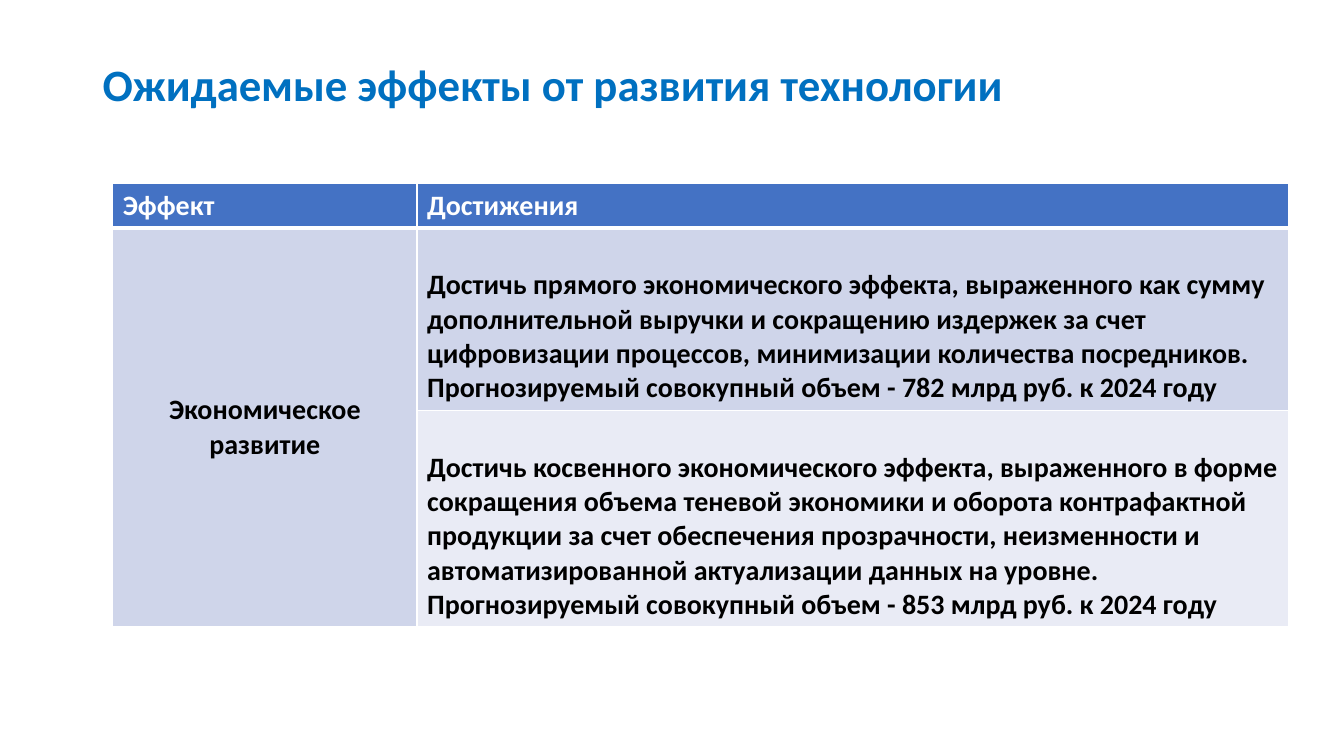
"""Build the slide on the expected effects of the technology."""
from lxml.etree import SubElement
from pptx import Presentation
from pptx.dml.color import RGBColor as Color
from pptx.enum.text import MSO_ANCHOR as Anchor, MSO_AUTO_SIZE as AutoSize, PP_ALIGN as Align
from pptx.oxml.ns import qn
from pptx.util import Cm, Pt

TITLE = "Ожидаемые эффекты от развития технологии"
HEADERS = ["Эффект", "Достижения"]
EFFECT = "Экономическое развитие"
ACHIEVEMENTS = [
    "Достичь прямого экономического эффекта, выраженного как сумму дополнительной "
    "выручки и сокращению издержек за счет цифровизации процессов, минимизации "
    "количества посредников. Прогнозируемый совокупный объем - 782 млрд руб. к 2024 году",
    "Достичь косвенного экономического эффекта, выраженного в форме сокращения объема "
    "теневой экономики и оборота контрафактной продукции за счет обеспечения "
    "прозрачности, неизменности и автоматизированной актуализации данных на уровне. "
    "Прогнозируемый совокупный объем - 853 млрд руб. к 2024 году",
]
COLORS = {
    "title": "0070C0", "header": "4472C4", "band": "CFD5EA",
    "light": "E9EBF5", "text": "000000", "white": "FFFFFF",
}
COLUMN_WIDTHS = [7.67, 21.97]
ROW_HEIGHTS = [1.11, 4.59, 5.46]
CELL_FORMATS = {
    "header": {"fill": "header", "color": "white", "anchor": Anchor.TOP, "align": Align.LEFT},
    "effect": {"fill": "band", "color": "text", "anchor": Anchor.MIDDLE, "align": Align.CENTER},
    "direct": {"fill": "band", "color": "text", "anchor": Anchor.BOTTOM, "align": Align.LEFT},
    "indirect": {"fill": "light", "color": "text", "anchor": Anchor.BOTTOM, "align": Align.LEFT},
}
CELLS = [
    [(HEADERS[0], "header"), (HEADERS[1], "header")],
    [(EFFECT, "effect"), (ACHIEVEMENTS[0], "direct")],
    [("", "effect"), (ACHIEVEMENTS[1], "indirect")],
]


def format_text(paragraph, size, color, align):
    paragraph.alignment = align
    font_format = {"name": "Calibri", "size": Pt(size), "bold": True}
    for name, value in font_format.items():
        setattr(paragraph.font, name, value)
    paragraph.font.color.rgb = Color.from_string(COLORS[color])


def add_borders(cell, bottom_width):
    properties = cell._tc.get_or_add_tcPr()
    for side, width in {"L": 1, "R": 1, "T": 1, "B": bottom_width}.items():
        line = SubElement(properties, qn(f"a:ln{side}"), w=str(Pt(width)))
        fill = SubElement(line, qn("a:solidFill"))
        SubElement(fill, qn("a:srgbClr"), val=COLORS["white"])


def add_title(slide):
    title = slide.shapes.title
    box = {"left": 2.33, "top": 0.36, "width": 29.21, "height": 3.68}
    for name, value in box.items():
        setattr(title, name, Cm(value))
    frame = title.text_frame
    frame.text = TITLE
    frame.auto_size = AutoSize.NONE
    frame.vertical_anchor = Anchor.MIDDLE
    frame.paragraphs[0].line_spacing = 0.9
    format_text(frame.paragraphs[0], 32, "title", Align.LEFT)


def add_effects_table(slide):
    table = slide.shapes.add_table(
        len(CELLS), len(HEADERS), Cm(2.84), Cm(4.63),
        Cm(sum(COLUMN_WIDTHS)), Cm(sum(ROW_HEIGHTS)),
    ).table
    for column, width in zip(table.columns, COLUMN_WIDTHS):
        column.width = Cm(width)
    for row, height in zip(table.rows, ROW_HEIGHTS):
        row.height = Cm(height)
    for row_index, row in enumerate(CELLS):
        for column_index, (text, kind) in enumerate(row):
            cell = table.cell(row_index, column_index)
            style = CELL_FORMATS[kind]
            cell.text = text
            cell.vertical_anchor = style["anchor"]
            add_borders(cell, 3 if kind == "header" else 1)
            cell.fill.solid()
            cell.fill.fore_color.rgb = Color.from_string(COLORS[style["fill"]])
            format_text(cell.text_frame.paragraphs[0], 20, style["color"], style["align"])
    table.cell(1, 0).merge(table.cell(2, 0))


def main():
    presentation = Presentation()
    presentation.slide_width, presentation.slide_height = Cm(33.87), Cm(19.05)
    slide = presentation.slides.add_slide(presentation.slide_layouts[5])
    add_title(slide)
    add_effects_table(slide)
    presentation.save("out.pptx")


if __name__ == "__main__":
    main()
